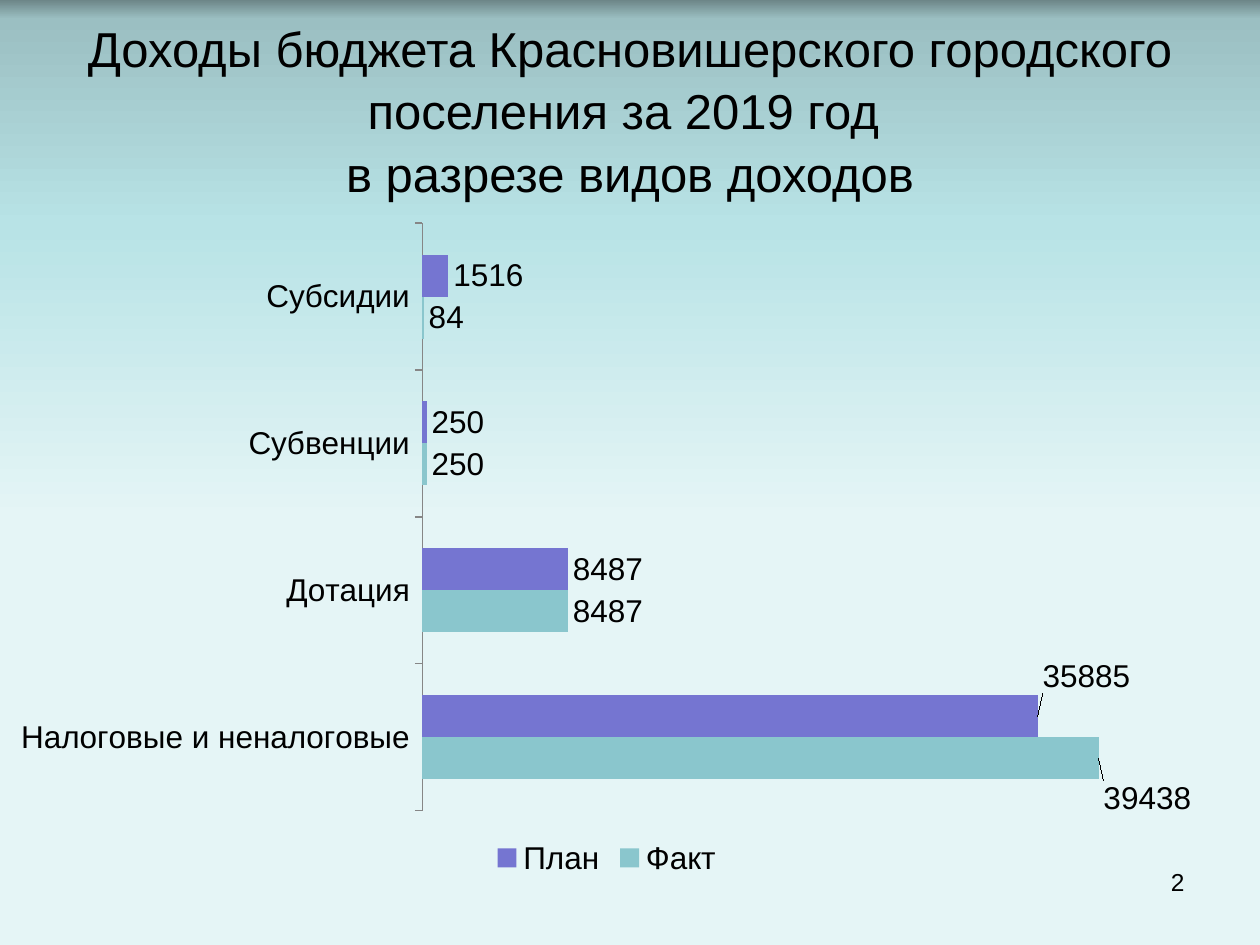
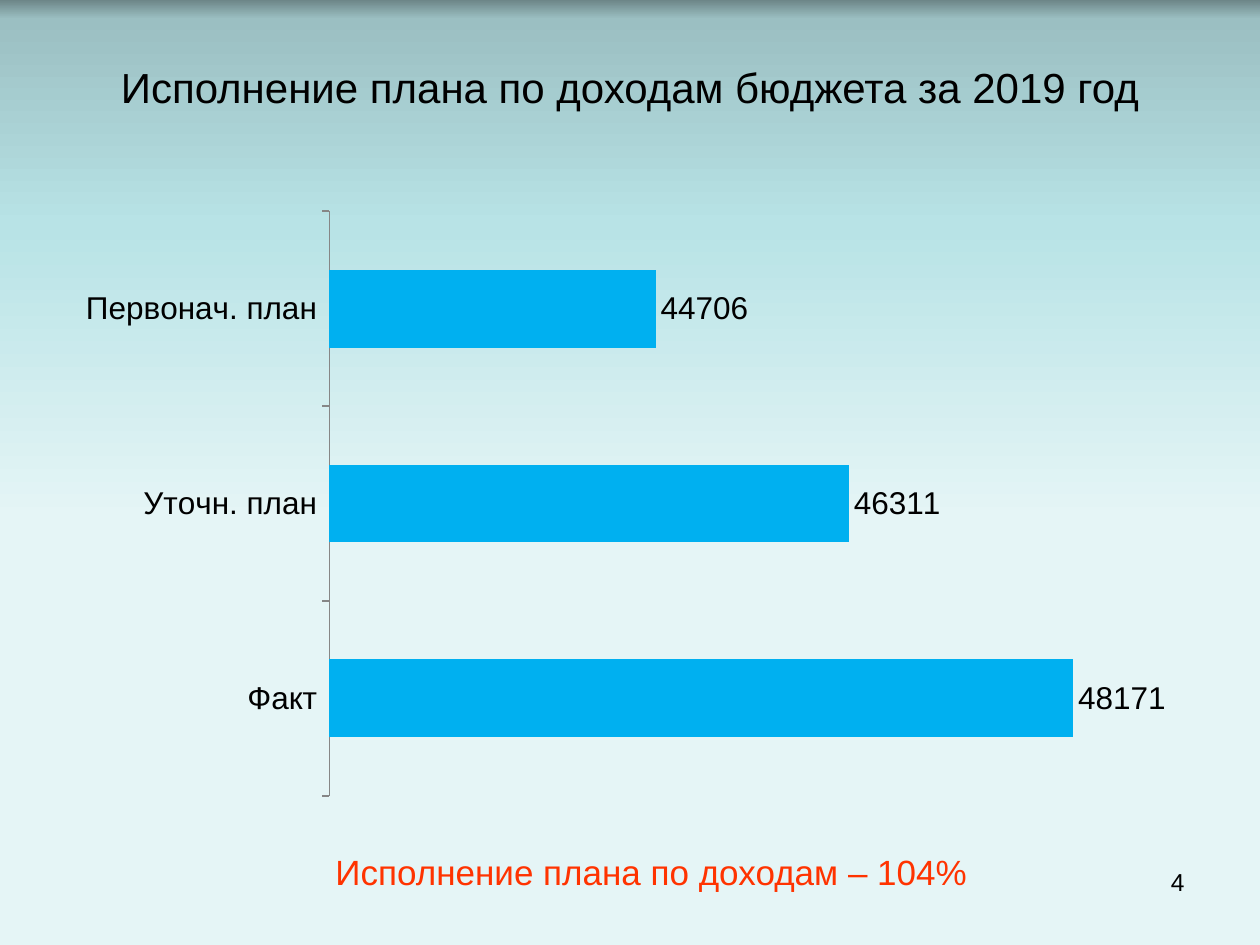
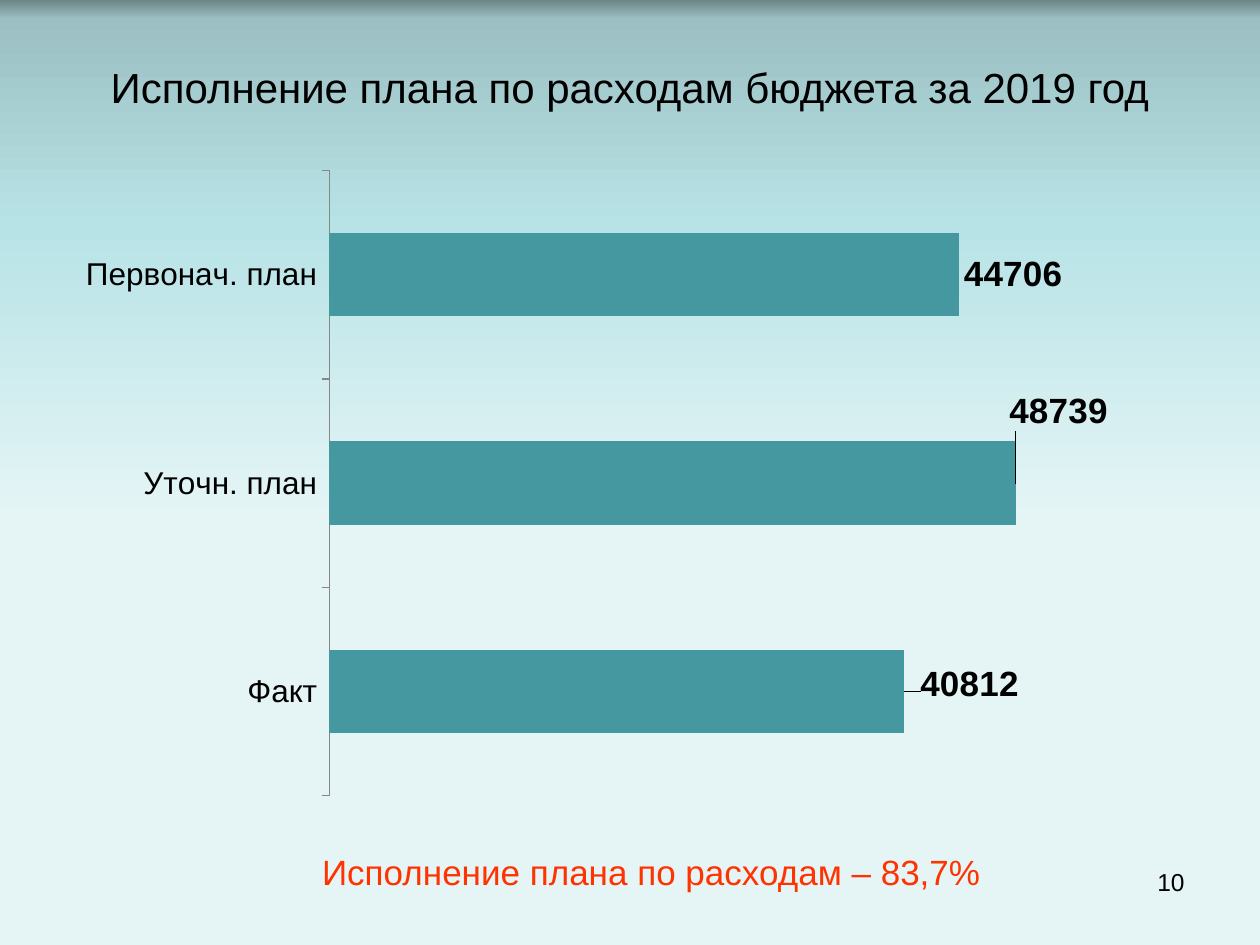
from lxml import etree
from pptx import Presentation
from pptx.chart.data import CategoryChartData
from pptx.dml.color import RGBColor
from pptx.enum import chart as kinds, text
from pptx.oxml import parse_xml
from pptx.oxml.ns import nsdecls, qn
from pptx.util import Inches, Pt

FONT = "Arial"
BLACK, AXIS_GREY, RED = "000000", "868686", "FF3300"
VIOLET, AQUA, BLUE, TEAL = "7575D1", "8AC6CD", "00B0F0", "4597A0"
GRADIENT = [(0, "6D8688"), (2, "9BBFC2"), (24, "B8E3E6"), (55, "E5F5F6"), (100, "E5F5F6")]
STAGES = ["Факт", "Уточн. план", "Первонач. план"]


def color(code):
    return RGBColor.from_string(code)


def style_font(font, size, code=BLACK, bold=False):
    font.name, font.size, font.bold = FONT, Pt(size), bold
    font.color.rgb = color(code)


def manual_layout(**places):
    """Chart layout element; the keywords are its child names."""
    items = "".join(f'<c:{name} val="{value}"/>' for name, value in places.items())
    return parse_xml(f'<c:layout {nsdecls("c")}><c:manualLayout>{items}'
                     "</c:manualLayout></c:layout>")


class BudgetDeck:
    def __init__(self):
        self.deck = Presentation()
        self.deck.slide_width, self.deck.slide_height = Inches(10), Inches(7.5)
        self.page = None
        self.paint_background()

    def paint_background(self):
        master = self.deck.slide_master
        fill = master.background.fill
        fill.gradient()
        fill.gradient_angle = 270
        stops = master.element.xpath(".//p:bg//a:gsLst")[0]
        for stop in list(stops):
            stops.remove(stop)
        for percent, code in GRADIENT:
            stop = etree.SubElement(stops, qn("a:gs"), pos=str(percent * 1000))
            etree.SubElement(stop, qn("a:srgbClr"), val=code)

    def add_page(self, number):
        self.page = self.deck.slides.add_slide(self.deck.slide_layouts[6])
        self.add_text(str(number), (7.17, 6.83, 2.33, 0.52), size=14,
                      align=text.PP_ALIGN.RIGHT, anchor=text.MSO_ANCHOR.TOP)

    def add_text(self, words, place, size, code=BLACK, align=text.PP_ALIGN.CENTER,
                 anchor=text.MSO_ANCHOR.MIDDLE, spacing=None):
        box = self.page.shapes.add_textbox(*map(Inches, place))
        frame = box.text_frame
        frame.word_wrap, frame.vertical_anchor = True, anchor
        para = frame.paragraphs[0]
        para.text, para.alignment, para.line_spacing = words, align, spacing
        for span in para.runs:
            style_font(span.font, size, code)

    def add_title(self, words, place=(0.5, 0.3, 9, 0.78), size=24, spacing=None):
        self.add_text(words, place, size, spacing=spacing)

    def add_conclusion(self, words):
        self.add_text(words, (2.17, 6.75, 6, 0.33), size=20, code=RED)

    def add_bars(self, place, categories, series, plot_area, limits,
                 legend=False, label_size=18, label_bold=False, shifts=()):
        """series: (name, colour, values); shifts: (series, point, dx, dy)."""
        data = CategoryChartData(number_format="General")
        data.categories = categories
        for name, _, values in series:
            data.add_series(name, values)
        chart = self.page.shapes.add_chart(
            kinds.XL_CHART_TYPE.BAR_CLUSTERED, *map(Inches, place), data).chart
        style_font(chart.font, 18)
        chart.has_title = False
        chart.has_legend = legend
        if legend:
            chart.legend.position = kinds.XL_LEGEND_POSITION.BOTTOM
            chart.legend.include_in_layout = False

        # Axes
        axis = chart.value_axis
        axis.visible = axis.has_major_gridlines = False
        axis.minimum_scale, axis.maximum_scale = limits
        axis = chart.category_axis
        axis.major_tick_mark = kinds.XL_TICK_MARK.OUTSIDE
        axis.format.line.color.rgb = color(AXIS_GREY)
        axis.format.line.width = Pt(0.75)

        # Bars and their values
        plot = chart.plots[0]
        plot.gap_width, plot.overlap, plot.vary_by_categories = 150, 0, False
        for bars, (_, code, _) in zip(plot.series, series):
            bars.format.fill.solid()
            bars.format.fill.fore_color.rgb = color(code)
            labels = bars.data_labels
            labels.show_value = True
            labels.position = kinds.XL_LABEL_POSITION.OUTSIDE_END
            style_font(labels.font, label_size, bold=label_bold)
        for row, point, dx, dy in shifts:
            label = plot.series[row].points[point].data_label
            style_font(label.font, label_size, bold=label_bold)
            label.position = kinds.XL_LABEL_POSITION.OUTSIDE_END
            index = chart.element.xpath(
                f".//c:ser[c:idx/@val={row}]//c:dLbl/c:idx[@val={point}]")[0]
            index.addnext(manual_layout(x=dx, y=dy))

        # Plot area
        area = chart.element.xpath(".//c:plotArea")[0]
        for old in area.findall(qn("c:layout")):
            area.remove(old)
        left, top, width, height = plot_area
        area.insert(0, manual_layout(layoutTarget="inner", xMode="edge", yMode="edge",
                                     x=left, y=top, w=width, h=height))


def main():
    budget = BudgetDeck()

    # Income by kind
    budget.add_page(2)
    budget.add_title("Доходы бюджета Красновишерского городского поселения за 2019 год \v"
                     "в разрезе видов доходов", (0.5, 0.17, 9, 1.38), 28, spacing=1.06)
    budget.add_bars(
        (-0.03, 1.67, 9.69, 5.33),
        ["Налоговые и неналоговые", "Дотация", "Субвенции", "Субсидии"],
        [("Факт", AQUA, (39438, 8487, 250, 84)),
         ("План", VIOLET, (35885, 8487, 250, 1516))],
        plot_area=(0.349, 0.019, 0.632, 0.875), limits=(0, 45000), legend=True,
        shifts=[(0, 0, 0, 0.06), (1, 0, 0, -0.06)])

    # Income against plan
    budget.add_page(4)
    budget.add_title("Исполнение плана по доходам бюджета за 2019 год")
    budget.add_bars(
        (0.5, 1.58, 9, 4.83), STAGES, [("Доходы", BLUE, (48171, 46311, 44706))],
        plot_area=(0.235, 0.02, 0.744, 0.961), limits=(42000, 49000))
    budget.add_conclusion("Исполнение плана по доходам – 104%")

    # Spending against plan
    budget.add_page(10)
    budget.add_title("Исполнение плана по расходам бюджета за 2019 год")
    budget.add_bars(
        (0.5, 1.25, 9, 5.17), STAGES, [("Расходы", TEAL, (40812, 48739, 44706))],
        plot_area=(0.235, 0.02, 0.745, 0.96), limits=(0, 60000),
        label_size=20, label_bold=True,
        shifts=[(0, 0, 0.01, -0.01), (0, 1, -0.01, -0.11)])
    budget.add_conclusion("Исполнение плана по расходам – 83,7%")

    budget.deck.save("out.pptx")


if __name__ == "__main__":
    main()
